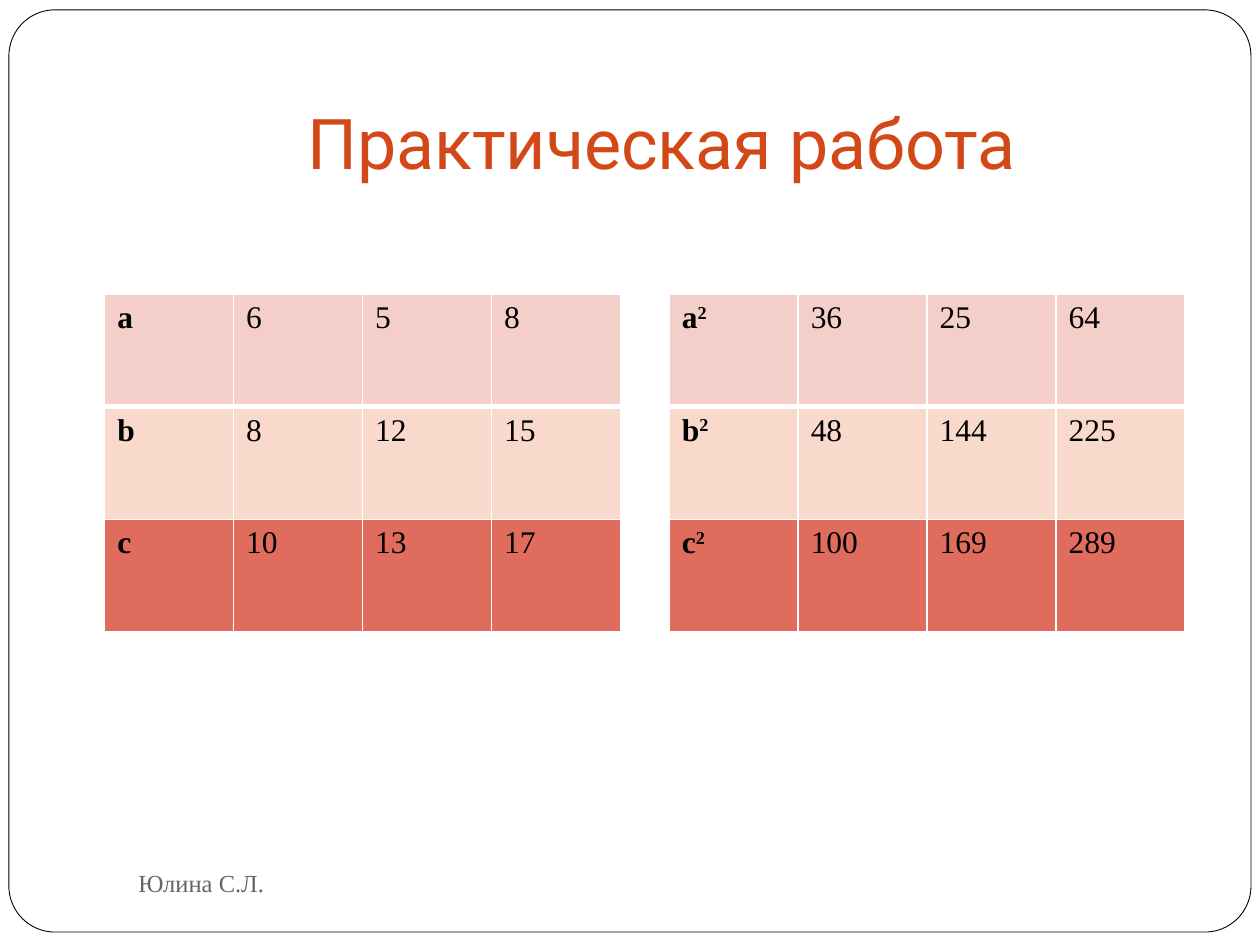
from dataclasses import dataclass

from lxml.etree import SubElement
from pptx import Presentation
from pptx.dml.color import RGBColor
from pptx.enum.shapes import MSO_SHAPE as Shape
from pptx.enum.text import MSO_ANCHOR as Anchor, MSO_AUTO_SIZE as AutoSize, PP_ALIGN as Align
from pptx.oxml.ns import qn
from pptx.util import Cm, Pt


@dataclass(frozen=True)
class Theme:
    title_font: str = "Roboto"
    text_font: str = "Times New Roman"
    title_size: int = 40
    cell_size: int = 18
    footer_size: int = 14
    title: str = "D34817"
    text: str = "000000"
    footer: str = "696464"
    paper: str = "FFFFFF"
    rows: tuple[str, ...] = ("F4CEC9", "FAD9CD", "DF6C5D")


@dataclass(frozen=True)
class NumberTable:
    left: float
    power: str
    rows: dict[str, tuple[int, ...]]


THEME = Theme()
TABLE_TOP, COLUMN_WIDTH, ROW_HEIGHT = 5.93, 2.6, 2.27
THIN, THICK = 1, 3
TABLES = (
    NumberTable(2.11, "", {"a": (6, 5, 8), "b": (8, 12, 15), "c": (10, 13, 17)}),
    NumberTable(13.49, "2", {"a": (36, 25, 64), "b": (48, 144, 225), "c": (100, 169, 289)}),
)


def add_run(para, text: str, font: str, size: int, color: str, bold: bool = False):
    span = para.add_run()
    span.text = text
    span.font.name = font
    span.font.size = Pt(size)
    span.font.bold = bold
    span.font.color.rgb = RGBColor.from_string(color)
    return span


def add_frame(slide) -> None:
    """Outline the page with a rounded rectangle behind everything else."""
    frame = slide.shapes.add_shape(
        Shape.ROUNDED_RECTANGLE, Cm(0.18), Cm(0.2), Cm(25.04), Cm(18.59))
    frame.adjustments[0] = 0.05
    frame.shadow.inherit = False
    frame.fill.solid()
    frame.fill.fore_color.rgb = RGBColor.from_string(THEME.paper)
    frame.line.color.rgb = RGBColor.from_string(THEME.text)
    frame.line.width = Pt(0.5)
    slide.shapes._spTree.insert(2, frame._element)


def add_title(slide, text: str) -> None:
    title = slide.shapes.title
    title.left, title.top, title.width, title.height = Cm(2.54), Cm(0.76), Cm(21.59), Cm(3.18)
    box = title.text_frame
    box.auto_size = AutoSize.NONE
    box.vertical_anchor = Anchor.BOTTOM
    box.margin_bottom = Cm(0.25)
    para = box.paragraphs[0]
    para.alignment = Align.CENTER
    add_run(para, text, THEME.title_font, THEME.title_size, THEME.title)


def set_borders(cell, top: int, bottom: int) -> None:
    """Draw the cell's borders; call before filling, as the XML order requires."""
    properties = cell._tc.get_or_add_tcPr()
    for side, width in (("L", THIN), ("R", THIN), ("T", top), ("B", bottom)):
        line = SubElement(properties, qn(f"a:ln{side}"), w=str(Pt(width)))
        SubElement(SubElement(line, qn("a:solidFill")), qn("a:srgbClr"), val=THEME.paper)


def add_cell_text(cell, text: str, bold: bool = False, power: str = "") -> None:
    para = cell.text_frame.paragraphs[0]
    style = (THEME.text_font, THEME.cell_size, THEME.text, bold)
    add_run(para, text, *style)
    if power:
        span = add_run(para, power, *style)
        span.font._element.set("baseline", "30000")


def add_number_table(slide, data: NumberTable) -> None:
    row_count = len(data.rows)
    column_count = 1 + len(data.rows["a"])
    table = slide.shapes.add_table(
        row_count, column_count, Cm(data.left), Cm(TABLE_TOP),
        Cm(column_count * COLUMN_WIDTH), Cm(row_count * ROW_HEIGHT)).table
    for column in table.columns:
        column.width = Cm(COLUMN_WIDTH)
    for index, (name, numbers) in enumerate(data.rows.items()):
        cells = list(table.rows[index].cells)
        for cell in cells:
            set_borders(cell, top=THICK if index == 1 else THIN,
                        bottom=THICK if index == 0 else THIN)
            cell.fill.solid()
            cell.fill.fore_color.rgb = RGBColor.from_string(THEME.rows[index])
        add_cell_text(cells[0], name, bold=True, power=data.power)
        for cell, number in zip(cells[1:], numbers):
            add_cell_text(cell, str(number))


def add_footer(slide, text: str) -> None:
    box = slide.shapes.add_textbox(Cm(2.54), Cm(17.15), Cm(11), Cm(1.27)).text_frame
    box.word_wrap = True
    box.vertical_anchor = Anchor.MIDDLE
    add_run(box.paragraphs[0], text, THEME.text_font, THEME.footer_size, THEME.footer)


def main() -> None:
    deck = Presentation()
    deck.slide_width, deck.slide_height = Cm(25.4), Cm(19.05)
    page = deck.slides.add_slide(deck.slide_layouts.get_by_name("Title Only"))
    add_frame(page)
    add_title(page, "Практическая работа")
    for data in TABLES:
        add_number_table(page, data)
    add_footer(page, "Юлина С.Л.")
    deck.save("out.pptx")


if __name__ == "__main__":
    main()
